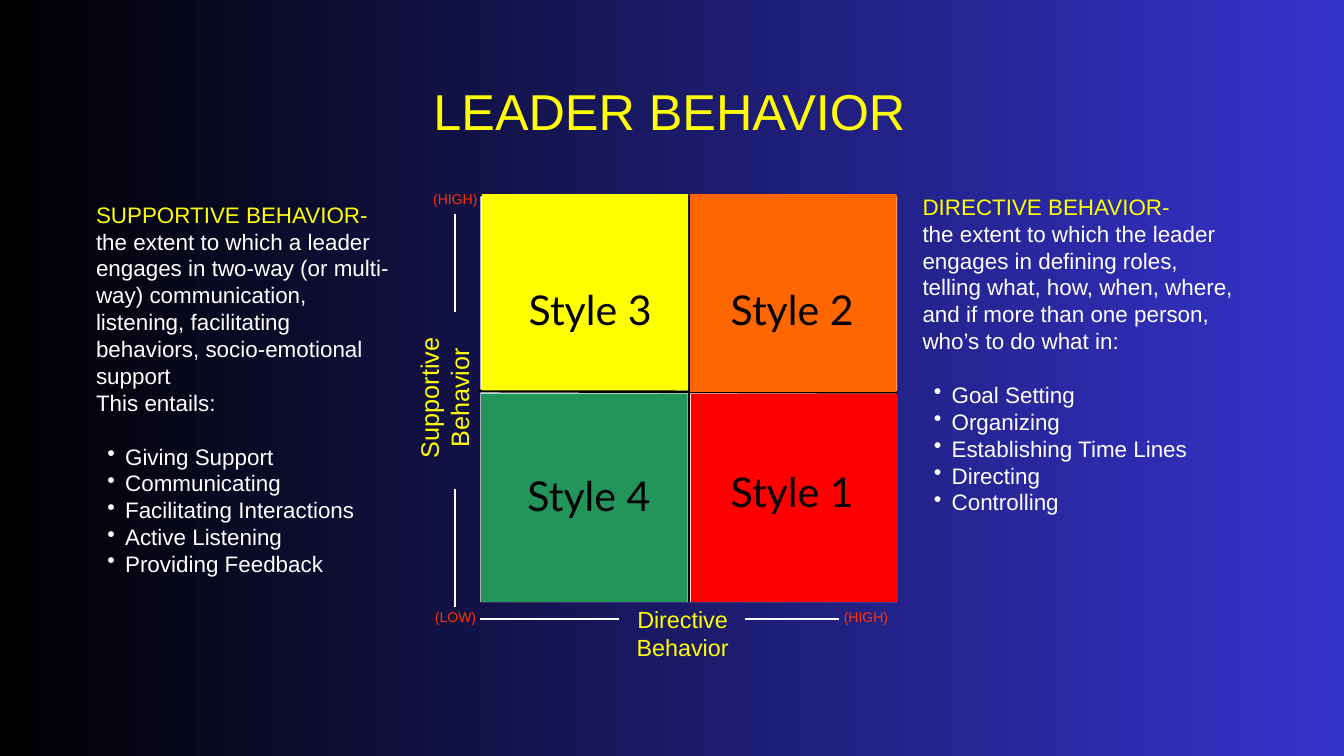
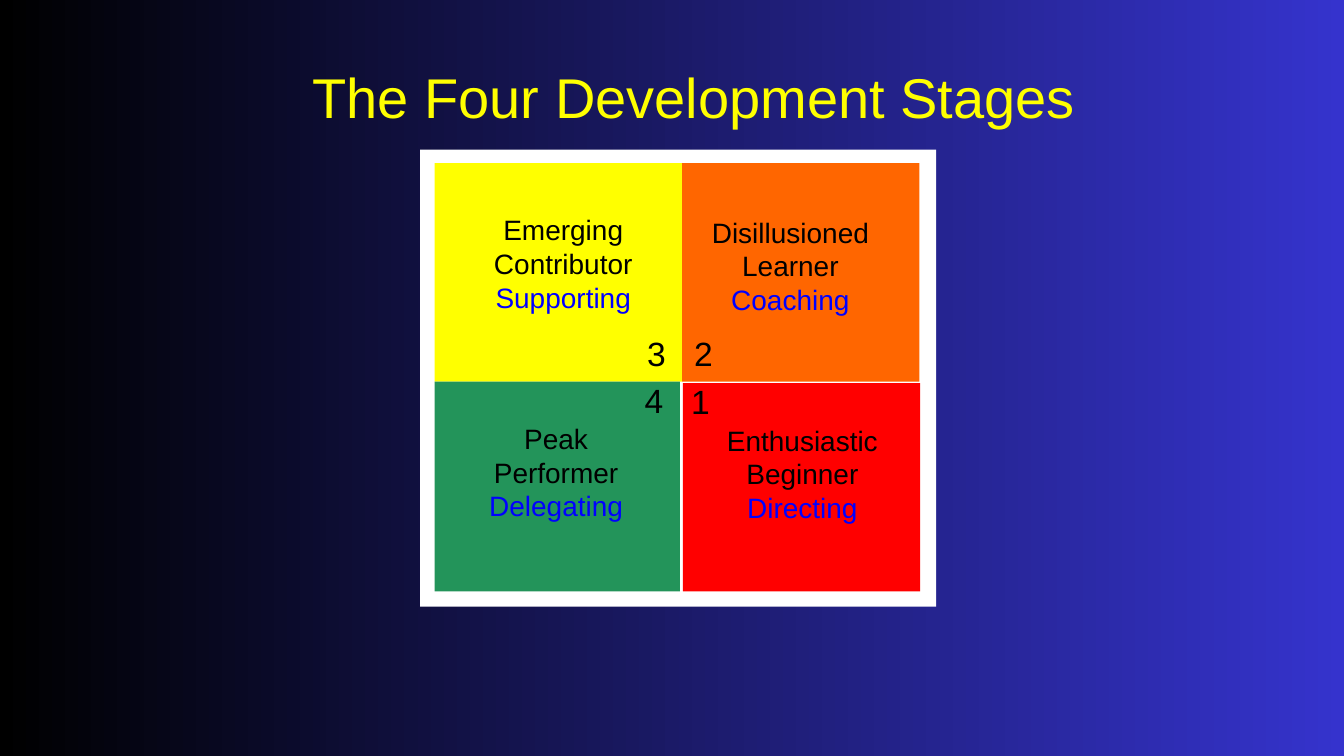
from dataclasses import dataclass

from lxml import etree
from pptx import Presentation
from pptx import util as u
from pptx.dml import color as col
from pptx.enum import shapes, text as tx
from pptx.oxml import ns


@dataclass(frozen=True)
class Theme:
    black: str = "000000"
    night: str = "3533CD"
    white: str = "FFFFFF"
    yellow: str = "FFFF00"
    orange: str = "FF6600"
    green: str = "23945A"
    red: str = "FF0000"
    blue: str = "0000FF"
    mark: str = "FF3300"
    font: str = "Arial"
    label: str = "Lato"
    body: int = 24
    style: int = 44
    stage: int = 30
    digit: int = 36
    end: int = 15
    lead: float = 1.2  # line height as a share of type size


T = Theme()

# Fill of each quadrant, by its number
FILLS = {1: T.red, 2: T.orange, 3: T.yellow, 4: T.green}

# Slide 1: boxes are left, top, width, height in cm
HEAD1 = ("LEADER BEHAVIOR", (15.24, 3.02, 20.14, 2.59), 54)
PLATE1 = (18.16, 7.42, 15.75, 15.34)
CROSS = [(18.08, 14.78, 33.93, 14.83), (26.04, 22.76, 26.04, 7.42)]
RULES = [
    (17.2, 8.08, 17.2, 11.79), (17.2, 18.47, 17.2, 22.96),
    (18.16, 23.39, 23.39, 23.39), (28.17, 23.39, 31.72, 23.39),
]
AXES = [
    ("Directive Behavior", (22.83, 22.89, 5.94, 2.18), 25, 0),
    ("Supportive Behavior", (13.61, 13.82, 6.5, 2.44), 27, 270),
]
ENDS = [
    ("(HIGH)", (31.83, 22.99, 1.8, 0.76)),
    ("(LOW)", (16.38, 22.99, 1.68, 0.76)),
    ("(HIGH)", (16.31, 7.21, 1.8, 0.76)),
]
STYLES = {  # number: tile, label box
    3: ((18.21, 7.34, 7.8, 7.42), (19.25, 10.03, 6.12, 2.36)),
    2: ((26.09, 7.34, 7.8, 7.47), (26.92, 10.03, 6.05, 2.36)),
    1: ((26.11, 14.88, 7.8, 7.87), (26.95, 16.94, 5.99, 2.36)),
    4: ((18.19, 14.88, 7.8, 7.87), (19.18, 17.07, 6.17, 2.36)),
}
SIDES = [  # box, heading, prose, bullets
    ((34.87, 7.29, 11.96, 12.19), "DIRECTIVE BEHAVIOR-",
     ["the extent to which the leader engages in defining roles, telling "
      "what, how, when, where, and if more than one person, who’s to do "
      "what in:"],
     ["Goal Setting", "Organizing", "Establishing Time Lines", "Directing",
      "Controlling"]),
    ((3.63, 7.59, 11.2, 14.2), "SUPPORTIVE BEHAVIOR-",
     ["the extent to which a leader engages in two-way (or multi-way) "
      "communication, listening, facilitating behaviors, socio-emotional "
      "support", "This entails:"],
     ["Giving Support", "Communicating", "Facilitating Interactions",
      "Active Listening", "Providing Feedback"]),
]

# Slide 2
HEAD2 = ("The Four Development Stages", (9.45, 2.36, 33.55, 2.62), 60)
PLATE2 = (15.88, 5.66, 19.51, 17.27)
STAGES = {  # number: tile, label box, digit box, paragraphs of runs
    1: ((25.81, 14.48, 8.97, 7.87), (26.8, 16, 7.06, 3.84),
        (26.01, 14.38, 0.94, 1.63),
        [[("Enthusiastic Beginner ", T.black), ("Directing", T.blue)]]),
    3: ((16.43, 6.17, 9.35, 8.26), (18.19, 8.05, 6.2, 3.84),
        (24.46, 12.57, 0.69, 1.63),
        [[("Emerging Contributor", T.black)], [("Supporting", T.blue)]]),
    2: ((25.78, 6.17, 8.97, 8.26), (26.47, 8.13, 6.81, 3.84),
        (26.24, 12.57, 0.71, 1.63),
        [[("Disillusioned Learner ", T.black), ("Coaching", T.blue)]]),
    4: ((16.43, 14.43, 9.27, 7.92), (17.58, 15.93, 6.88, 3.84),
        (24.36, 14.35, 0.71, 1.63),
        [[("Peak Performer ", T.black), ("Delegating", T.blue)]]),
}


def rgb(code):
    return col.RGBColor.from_string(code)


def cms(nums):
    return [u.Cm(n) for n in nums]


def bullet(para):
    props = para._p.get_or_add_pPr()
    props.set("marL", str(u.Cm(1.1)))
    props.set("indent", str(u.Cm(-0.67)))
    etree.SubElement(props, ns.qn("a:buChar")).set("char", "•")


def write(slide, box, paras, size, color=T.black, font=T.font, lead=None,
          align=tx.PP_ALIGN.CENTER, turn=0, items=(), shape=None):
    """Set paragraphs (strings or lists of runs), then bulleted items."""
    lead = lead or size * T.lead
    shape = shape or slide.shapes.add_textbox(0, 0, 0, 0)
    shape.left, shape.top, shape.width, shape.height = cms(box)
    shape.rotation = turn
    frame = shape.text_frame
    frame.word_wrap = True
    frame.auto_size = tx.MSO_AUTO_SIZE.NONE
    frame.vertical_anchor = tx.MSO_ANCHOR.TOP
    frame.margin_left = frame.margin_right = 0
    frame.margin_top = frame.margin_bottom = 0
    for i, runs in enumerate([*paras, *items]):
        para = frame.add_paragraph() if i else frame.paragraphs[0]
        if i >= len(paras):
            bullet(para)
        para.alignment = align
        para.line_spacing = u.Pt(lead)
        para.space_before = u.Pt(lead if items and i == len(paras) else 0)
        for words, tint in [(runs, color)] if isinstance(runs, str) else runs:
            run = para.add_run()
            run.text = words
            run.font.name, run.font.size = font, u.Pt(size)
            run.font.color.rgb = rgb(tint)


def tile(slide, box, fill):
    shape = slide.shapes.add_shape(shapes.MSO_SHAPE.RECTANGLE, *cms(box))
    shape.shadow.inherit = False
    shape.fill.solid()
    shape.fill.fore_color.rgb = rgb(fill)
    shape.line.fill.background()


def rule(slide, ends, color, width):
    line = slide.shapes.add_connector(
        shapes.MSO_CONNECTOR.STRAIGHT, *cms(ends))
    line.line.color.rgb = rgb(color)
    line.line.width = u.Pt(width)
    etree.SubElement(line._element.spPr, ns.qn("a:effectLst"))


def start(deck, head):
    slide = deck.slides.add_slide(deck.slide_layouts[5])
    words, box, size = head
    write(slide, box, [words], size, T.yellow, shape=slide.shapes.title)
    return slide


def backdrop(deck):
    fill = deck.slide_master.background.fill
    fill.gradient()
    fill.gradient_angle = 0
    for stop, code in zip(fill.gradient_stops, (T.black, T.night)):
        stop.color.rgb = rgb(code)


def behavior(deck):
    slide = start(deck, HEAD1)
    # Axes
    for words, box, size, turn in AXES:
        write(slide, box, [words], size, T.yellow, turn=turn)
    for ends in RULES:
        rule(slide, ends, T.white, 1.5)
    for words, box in ENDS:
        write(slide, box, [words], T.end, T.mark)
    # Grid of styles
    tile(slide, PLATE1, T.white)
    for ends in CROSS:
        rule(slide, ends, T.black, 3)
    for num, (box, label) in STYLES.items():
        tile(slide, box, FILLS[num])
        write(slide, label, [f"Style {num}"], T.style, font=T.label,
              lead=72.8)
    # Side columns
    for box, head, prose, items in SIDES:
        write(slide, box, [[(head, T.yellow)], *prose], T.body, T.white,
              align=tx.PP_ALIGN.LEFT, items=items)


def stages(deck):
    slide = start(deck, HEAD2)
    tile(slide, PLATE2, T.white)
    for num, (box, *_) in STAGES.items():
        tile(slide, box, FILLS[num])
    for num, (_, label, spot, paras) in STAGES.items():
        write(slide, label, paras, T.stage)
        write(slide, spot, [str(num)], T.digit)


def main():
    deck = Presentation()
    deck.slide_width = u.Cm(50.8)
    deck.slide_height = deck.slide_width * 9 // 16
    backdrop(deck)
    behavior(deck)
    stages(deck)
    deck.save("out.pptx")


if __name__ == "__main__":
    main()
